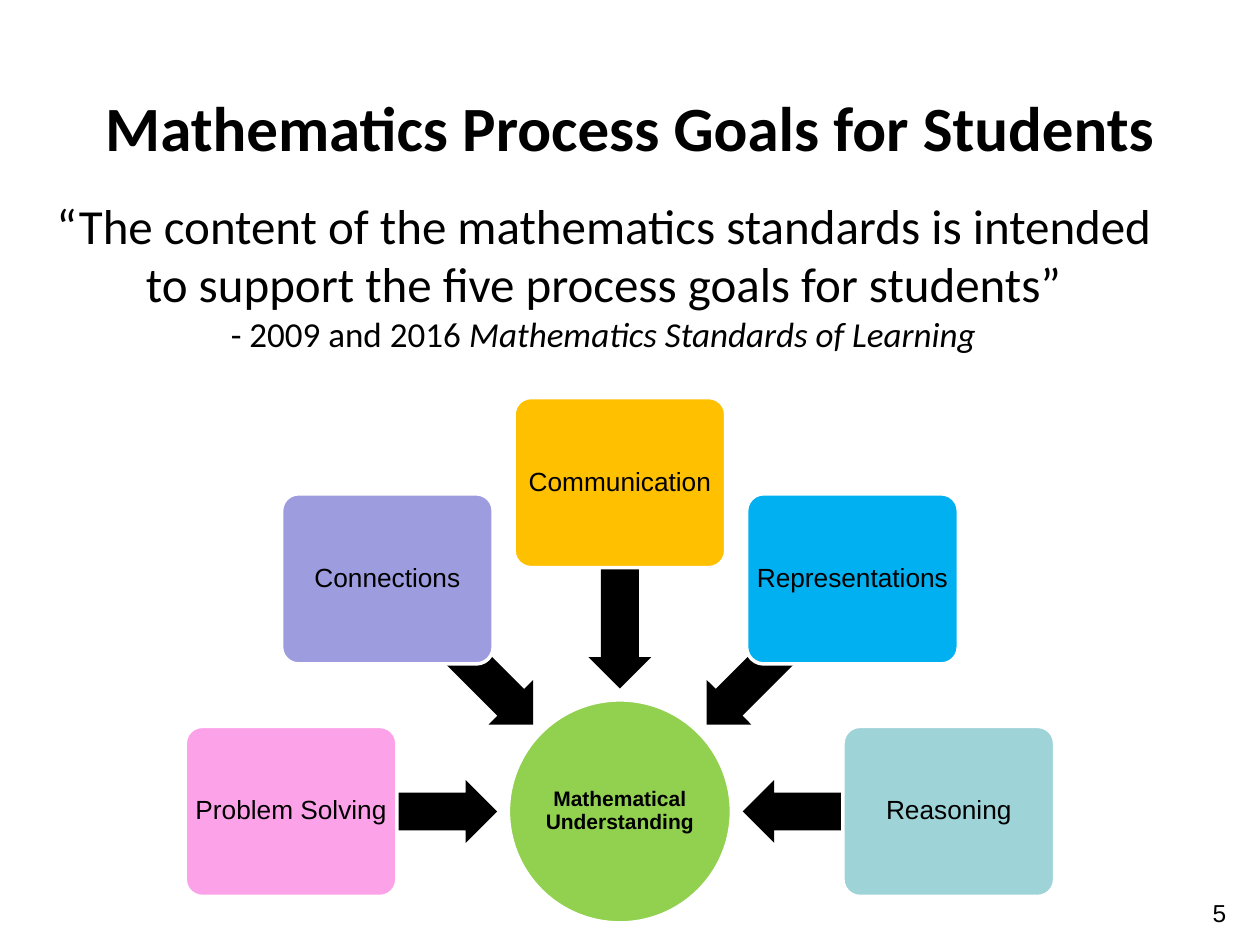
from math import cos, radians, sin

from pptx import Presentation
from pptx.dml.color import RGBColor
from pptx.enum.shapes import MSO_SHAPE
from pptx.enum.text import MSO_ANCHOR, PP_ALIGN
from pptx.util import Inches, Pt

CENTER, RIGHT = PP_ALIGN.CENTER, PP_ALIGN.RIGHT
MIDDLE = MSO_ANCHOR.MIDDLE
ELLIPSE = MSO_SHAPE.OVAL
ROUNDED = MSO_SHAPE.ROUNDED_RECTANGLE
LEFT_ARROW = MSO_SHAPE.LEFT_ARROW

HUB_X, HUB_Y, HUB_SIZE = 4.92, 6.44, 1.77
GOAL_RADIUS, ARROW_RADIUS = 2.61, 1.79
FIRST_ANGLE, ANGLE_STEP = 180, 45
GOALS = [
    ("Problem Solving", "FCA2E9"),
    ("Connections", "9C9CDF"),
    ("Communication", "FFC000"),
    ("Representations", "00B0F0"),
    ("Reasoning", "9ED3D7"),
]


def color(value):
    return RGBColor.from_string(value)


def add_span(para, text, size, name="Arial", **styles):
    span = para.add_run()
    span.text = text
    formats = {"size": Pt(size), "name": name, **styles}
    for key, value in formats.items():
        setattr(span.font, key, value)
    span.font.color.rgb = color("000000")


def add_text_box(page, left, top, width, height, alignment):
    """Add a wrapping text box and return its first paragraph."""
    box = page.shapes.add_textbox(
        Inches(left), Inches(top), Inches(width), Inches(height))
    box.text_frame.word_wrap = True
    para = box.text_frame.paragraphs[0]
    para.alignment = alignment
    return para


def add_centered_shape(page, kind, x, y, width, height, fill):
    """Add a filled shape whose middle is at x, y."""
    shape = page.shapes.add_shape(
        kind, Inches(x - width / 2), Inches(y - height / 2),
        Inches(width), Inches(height))
    shape.shadow.inherit = False
    shape.fill.solid()
    shape.fill.fore_color.rgb = color(fill)
    shape.line.fill.background()
    return shape


def add_label(shape, text, size, inset, bold=False):
    """Outline the shape in white and write its label inside."""
    shape.line.color.rgb = color("FFFFFF")
    shape.line.width = Pt(2)
    frame = shape.text_frame
    margins = ("margin_left", "margin_top", "margin_right", "margin_bottom")
    formats = {"word_wrap": True, "vertical_anchor": MIDDLE,
               **dict.fromkeys(margins, Inches(inset))}
    for key, value in formats.items():
        setattr(frame, key, value)
    para = frame.paragraphs[0]
    para.alignment = CENTER
    para.line_spacing = 0.9
    add_span(para, text, size, bold=bold)


def around_hub(angle, radius):
    turn = radians(angle)
    return HUB_X + radius * cos(turn), HUB_Y + radius * sin(turn)


def add_goal(page, text, fill, angle):
    """Add a goal box and, behind it, its arrow to the hub."""
    arrow = add_centered_shape(
        page, LEFT_ARROW, *around_hub(angle, ARROW_RADIUS), 1.63, 0.5, "000000")
    arrow.adjustments[0] = 0.6
    arrow.adjustments[1] = 0.5
    arrow.rotation = angle % 360
    goal = add_centered_shape(
        page, ROUNDED, *around_hub(angle, GOAL_RADIUS), 1.68, 1.35, fill)
    goal.adjustments[0] = 0.1
    add_label(goal, text, 15, 0.03)


def add_title(page, text):
    title = page.shapes.title
    place = {"left": 0, "top": 0.5, "width": 10, "height": 1}
    for key, value in place.items():
        setattr(title, key, Inches(value))
    title.text_frame.vertical_anchor = MIDDLE
    para = title.text_frame.paragraphs[0]
    para.alignment = CENTER
    add_span(para, text, 36, "Calibri", bold=True)


def add_quotation(page):
    para = add_text_box(page, 0.28, 1.5, 9.02, 1.5, CENTER)
    add_span(para, "“The content of the mathematics standards is intended "
             "to support the five process goals for students”", 28, "Calibri")
    para.add_line_break()
    add_span(para, "- 2009 and 2016 ", 20, "Calibri")
    add_span(para, "Mathematics Standards of Learning", 20, "Calibri",
             italic=True)


def main():
    deck = Presentation()
    deck.slide_width, deck.slide_height = Inches(10), Inches(7.5)
    page = deck.slides.add_slide(deck.slide_layouts[5])
    add_title(page, "Mathematics Process Goals for Students")
    hub = add_centered_shape(
        page, ELLIPSE, HUB_X, HUB_Y, HUB_SIZE, HUB_SIZE, "92D050")
    add_label(hub, "Mathematical Understanding", 12, 0.01, bold=True)
    for index, (text, fill) in enumerate(GOALS):
        add_goal(page, text, fill, FIRST_ANGLE + index * ANGLE_STEP)
    add_span(add_text_box(page, 7.5, 7.08, 2.33, 0.52, RIGHT), "5", 14)
    add_quotation(page)
    deck.save("out.pptx")


if __name__ == "__main__":
    main()
